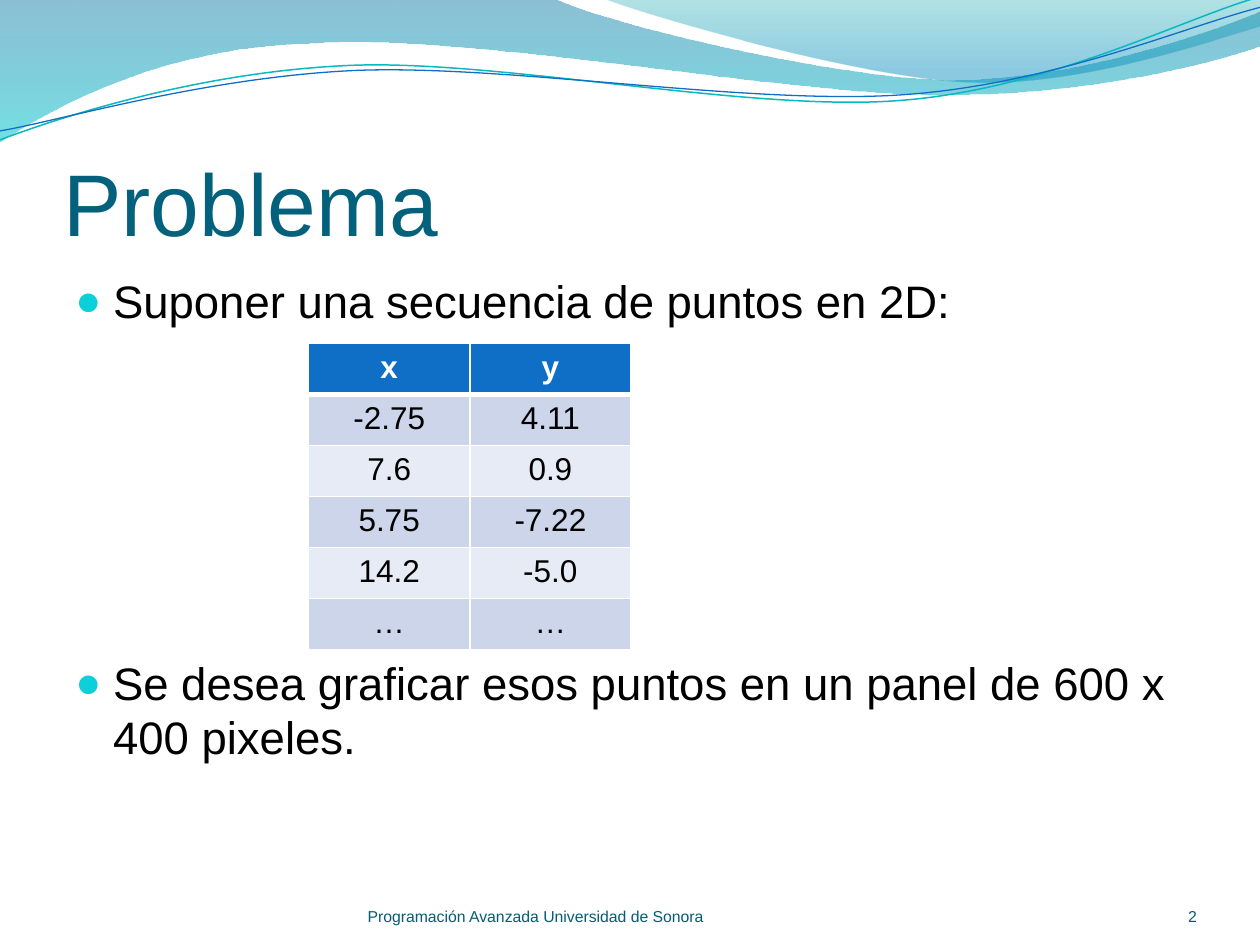
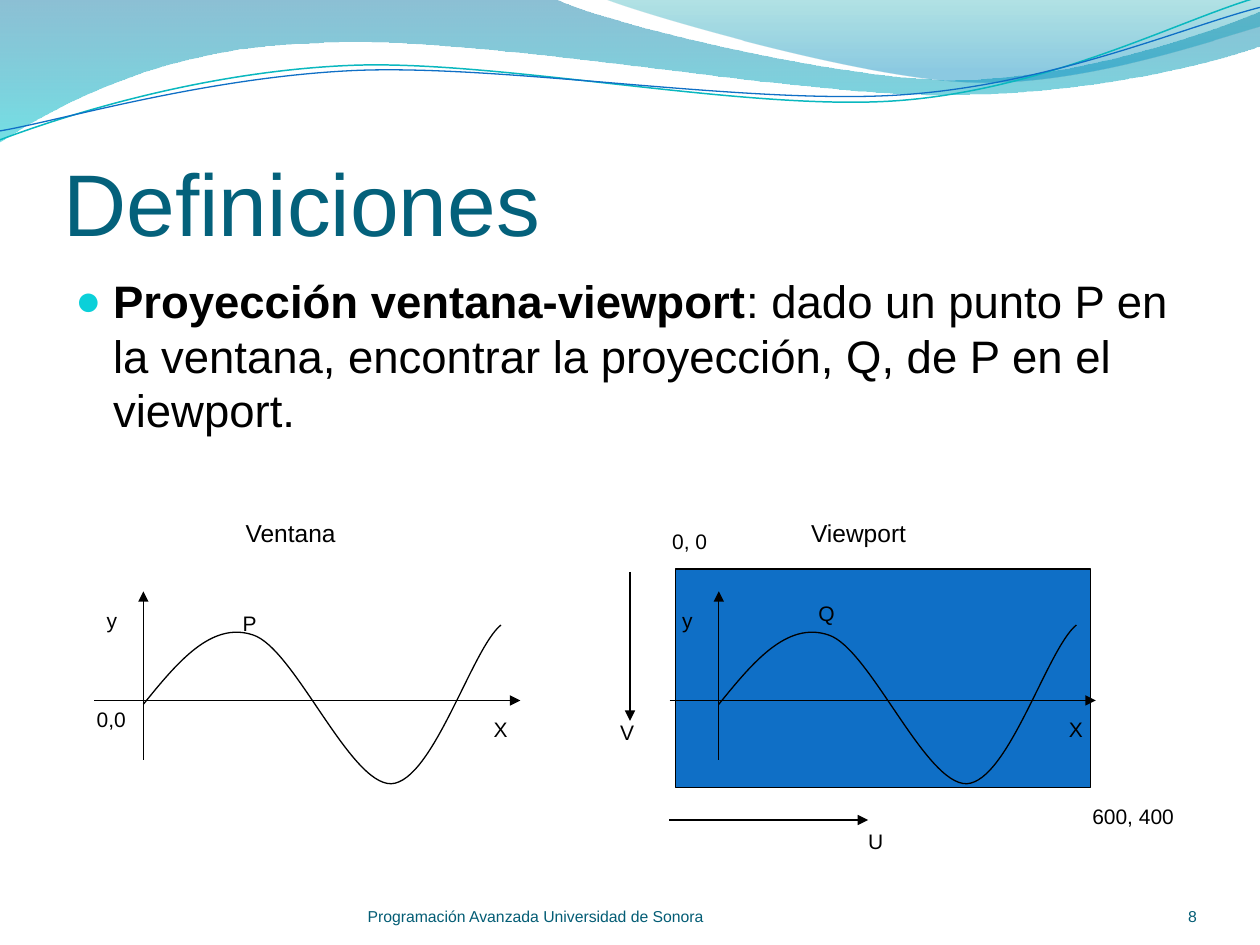
from lxml.etree import SubElement
from pptx import Presentation
from pptx.dml.color import RGBColor
from pptx.enum.shapes import MSO_CONNECTOR, MSO_SHAPE
from pptx.enum.text import MSO_ANCHOR, PP_ALIGN
from pptx.oxml.ns import qn
from pptx.util import Cm, Pt

FONT = "Arial"
BLACK, WHITE, BLUE = "000000", "FFFFFF", "0F6FC6"
TITLE_COLOR, FOOTER_COLOR, BULLET_COLOR = "04617B", "045D75", "0BD0D9"
FOOTER = "Programación Avanzada Universidad de Sonora"


def add_text(frame, text, size=12, color=BLACK, bold=False, lead="", align=PP_ALIGN.LEFT,
             anchor=MSO_ANCHOR.TOP, wrap=False, inset=None, bullet=False, gap=0):
    """Fill a text frame, one paragraph a line; lead is a bold opening, gap the space between."""
    frame.word_wrap = wrap
    frame.vertical_anchor = anchor
    if inset is not None:
        frame.margin_left = frame.margin_right = frame.margin_bottom = Cm(inset)
        frame.margin_top = Cm(inset)
    for index, line in enumerate(text.split("\n")):
        paragraph = frame.add_paragraph() if index else frame.paragraphs[0]
        paragraph.alignment = align
        if index:
            paragraph.space_before = Pt(gap)
        if bullet:
            properties = paragraph._p.get_or_add_pPr()
            properties.set("marL", str(Cm(0.76)))
            properties.set("indent", str(-Cm(0.76)))
            SubElement(SubElement(properties, qn("a:buClr")), qn("a:srgbClr"), val=BULLET_COLOR)
            SubElement(properties, qn("a:buSzPct"), val="95000")
            SubElement(properties, qn("a:buFont"), typeface=FONT)
            SubElement(properties, qn("a:buChar"), char="●")
        for words, is_bold in ((lead, True), (line, bold)):
            if words:
                run = paragraph.add_run()
                run.text = words
                run.font.name = FONT
                run.font.size = Pt(size)
                run.font.bold = is_bold
                run.font.color.rgb = RGBColor.from_string(color)


def paint(shape, fill=None, gradient=None, line=None, width=0.75):
    """Set fill and outline; gradient is (position, colour, opacity in percent) for two stops."""
    shape.shadow.inherit = False
    if gradient:
        shape.fill.gradient()
        shape.fill.gradient_angle = 270
        for stop, (position, color, opacity) in zip(shape.fill.gradient_stops, gradient):
            stop.position = position
            stop.color.rgb = RGBColor.from_string(color)
        for node, (_, _, opacity) in zip(shape._element.spPr.iter(qn("a:srgbClr")), gradient):
            SubElement(node, qn("a:alpha"), val=str(opacity * 1000))
    elif fill:
        shape.fill.solid()
        shape.fill.fore_color.rgb = RGBColor.from_string(fill)
    else:
        shape.fill.background()
    if line:
        shape.line.color.rgb = RGBColor.from_string(line)
        shape.line.width = Pt(width)
    else:
        shape.line.fill.background()


# Outlines in cm: a pair is a straight segment, six numbers are a Bézier segment.
wide_wave = [(0, 0), (11.18, -0.03),
             (12.09, 0.43, 16.87, 1.6, 19.25, 1.6), (21.67, 1.6, 24.33, 0.66, 25.4, 0.23),
             (25.43, 0.91), (24.97, 1.12, 22.1, 1.93, 18.95, 1.91),
             (15.8, 1.91, 9.7, 0.71, 6.53, 0.86), (3.28, 0.91, 1.17, 2.11, -0.03, 2.87), (0, 0)]
right_wave = [(12.17, -0.03), (12.93, 0.28, 17.32, 1.57, 19.53, 1.65),
              (21.74, 1.75, 24.41, 0.81, 25.4, 0.53), (25.4, 0), (12.17, -0.03)]
teal_thread = [(0, 2.82), (1.22, 2.36, 4.01, 1.45, 7.04, 1.32),
               (10.03, 1.19, 15.06, 2.26, 18.11, 2.03), (21.16, 1.8, 23.83, 0.38, 25.35, -0.05)]
blue_thread = [(0, 2.64), (1.19, 2.44, 4.17, 1.55, 7.19, 1.42),
               (10.24, 1.3, 15.16, 2.13, 18.21, 1.91), (21.23, 1.7, 23.9, 0.53, 25.4, 0.15)]
sine = [(0, 14.2), (0.68, 13.36, 1.37, 12.52, 2.21, 12.8),
        (3.04, 13.06, 4.16, 15.82, 5, 15.8), (5.84, 15.75, 6.63, 13.06, 7.21, 12.6)]

# Each curve: outline, shift to the right, format.
header_curves = [
    (wide_wave, 0, {"gradient": [(0, "0074A1", 45), (1, "00C6CF", 55)]}),
    (right_wave, 0, {"gradient": [(0, "00A1A9", 30), (0.8, "008BBF", 45)]}),
    (teal_thread, 0, {"line": "0AB8BF", "width": 0.85}),
    (blue_thread, 0, {"line": BLUE}),
]

# Diagram of window and viewport: the same plot at two origins.
plot_origins = (2.89, 14.49)
plot_curves, labels = [], []
arrows = [(12.7, 11.53, 12.7, 14.53), (13.49, 16.53, 17.5, 16.53)]
for origin in plot_origins:
    plot_curves.append((sine, origin, {"line": BLACK}))
    arrows += [(origin, 15.32, origin, 11.92), (origin - 0.99, 14.12, origin + 7.6, 14.12)]
    labels += [("X", origin + 6.81, 14.33, 0.81, 12), ("y", origin - 0.99, 12.12, 0.76, 12)]
labels += [
    ("P", 4.64, 12.19, 0.76, 12), ("Q", 16.25, 11.99, 0.84, 12),
    ("0,0", 1.7, 14.12, 1.19, 12), ("0, 0", 13.3, 10.53, 1.35, 12),
    ("600, 400", 21.77, 16.08, 2.16, 12),
    ("U", 17.25, 16.58, 0.81, 12), ("V", 12.25, 14.38, 0.81, 12),
    ("Ventana", 4.7, 10.31, 2.57, 14), ("Viewport", 16.1, 10.31, 2.69, 14),
]

pages = [
    {"title": "Problema", "number": "2", "lead": "",
     "body": "Suponer una secuencia de puntos en 2D:\n"
             "Se desea graficar esos puntos en un panel de 600 x 400 pixeles.",
     "rectangles": [], "curves": [], "arrows": [], "labels": [],
     "points": [("x", "y"), ("-2.75", "4.11"), ("7.6", "0.9"), ("5.75", "-7.22"),
                ("14.2", "-5.0"), ("…", "…")]},
    {"title": "Definiciones", "number": "8", "lead": "Proyección ventana-viewport",
     "body": ": dado un punto P en la ventana, encontrar la proyección, Q, de P en el viewport.",
     "rectangles": [(13.62, 11.47, 8.36, 4.4)], "curves": plot_curves, "arrows": arrows,
     "labels": labels, "points": []},
]

presentation = Presentation()
presentation.slide_width, presentation.slide_height = Cm(25.4), Cm(19.05)

for page in pages:
    slide = presentation.slides.add_slide(presentation.slide_layouts[6])

    for box in page["rectangles"]:
        viewport = slide.shapes.add_shape(MSO_SHAPE.RECTANGLE, *map(Cm, box))
        paint(viewport, fill=BLUE, line=BLACK)

    for outline, shift, look in header_curves + page["curves"]:
        points = [(Cm(x + shift), Cm(y)) for segment in outline
                  for x, y in zip(segment[::2], segment[1::2])]
        builder = slide.shapes.build_freeform(*points[0])
        builder.add_line_segments(points[1:], close="gradient" in look)
        curve = builder.convert_to_shape()
        # Join the three straight steps of each Bézier segment into one curve.
        steps = iter(list(curve._element.iter(qn("a:lnTo"))))
        for segment in outline[1:]:
            step = next(steps)
            if len(segment) == 6:
                step.tag = qn("a:cubicBezTo")
                for _ in range(2):
                    extra = next(steps)
                    step.append(extra[0])
                    extra.getparent().remove(extra)
        paint(curve, **look)

    for ends in page["arrows"]:
        arrow = slide.shapes.add_connector(MSO_CONNECTOR.STRAIGHT, *map(Cm, ends))
        arrow.line.color.rgb = RGBColor.from_string(BLACK)
        arrow.line.width = Pt(0.75)
        SubElement(arrow.line._get_or_add_ln(), qn("a:tailEnd"), type="triangle")
        SubElement(arrow._element.spPr, qn("a:effectLst"))

    flush = {"anchor": MSO_ANCHOR.BOTTOM, "inset": 0, "wrap": True}
    footer = {"size": 9, "color": FOOTER_COLOR, **flush}
    texts = [
        (page["title"], (1.28, 1.94, 22.86, 3.18), {"size": 50, "color": TITLE_COLOR, **flush}),
        (page["body"], (1.27, 5.38, 22.86, 12.19),
         {"size": 26, "lead": page["lead"], "wrap": True, "bullet": True, "gap": 187}),
        (FOOTER, (7.41, 17.65, 9.32, 1.02), footer),
        (page["number"], (22.02, 17.65, 2.11, 1.02), {"align": PP_ALIGN.RIGHT, **footer}),
    ]
    for text, left, top, width, size in page["labels"]:
        texts.append((text, (left, top, width, 0.76), {"size": size}))
    for text, box, look in texts:
        text_box = slide.shapes.add_textbox(*map(Cm, box))
        add_text(text_box.text_frame, text, **look)

    if page["points"]:
        row_count = len(page["points"])
        table = slide.shapes.add_table(row_count, 2, Cm(6.22), Cm(6.92), Cm(6.5),
                                       Cm(1.03 * row_count)).table
        table.first_row = table.horz_banding = False
        for row, values in enumerate(page["points"]):
            for column, value in enumerate(values):
                cell = table.cell(row, column)
                for side in "LRTB":
                    thick = (row, side) in ((0, "B"), (1, "T"))
                    border = SubElement(cell._tc.get_or_add_tcPr(), qn("a:ln" + side),
                                        w=str(Pt(3 if thick else 1)))
                    SubElement(SubElement(border, qn("a:solidFill")), qn("a:srgbClr"), val=WHITE)
                cell.fill.solid()
                fill = BLUE if row == 0 else ("E7EBF5", "CCD5EA")[row % 2]
                cell.fill.fore_color.rgb = RGBColor.from_string(fill)
                add_text(cell.text_frame, value, size=18, bold=row == 0, wrap=True,
                         color=BLACK if row else WHITE, align=PP_ALIGN.CENTER)

presentation.save("out.pptx")
